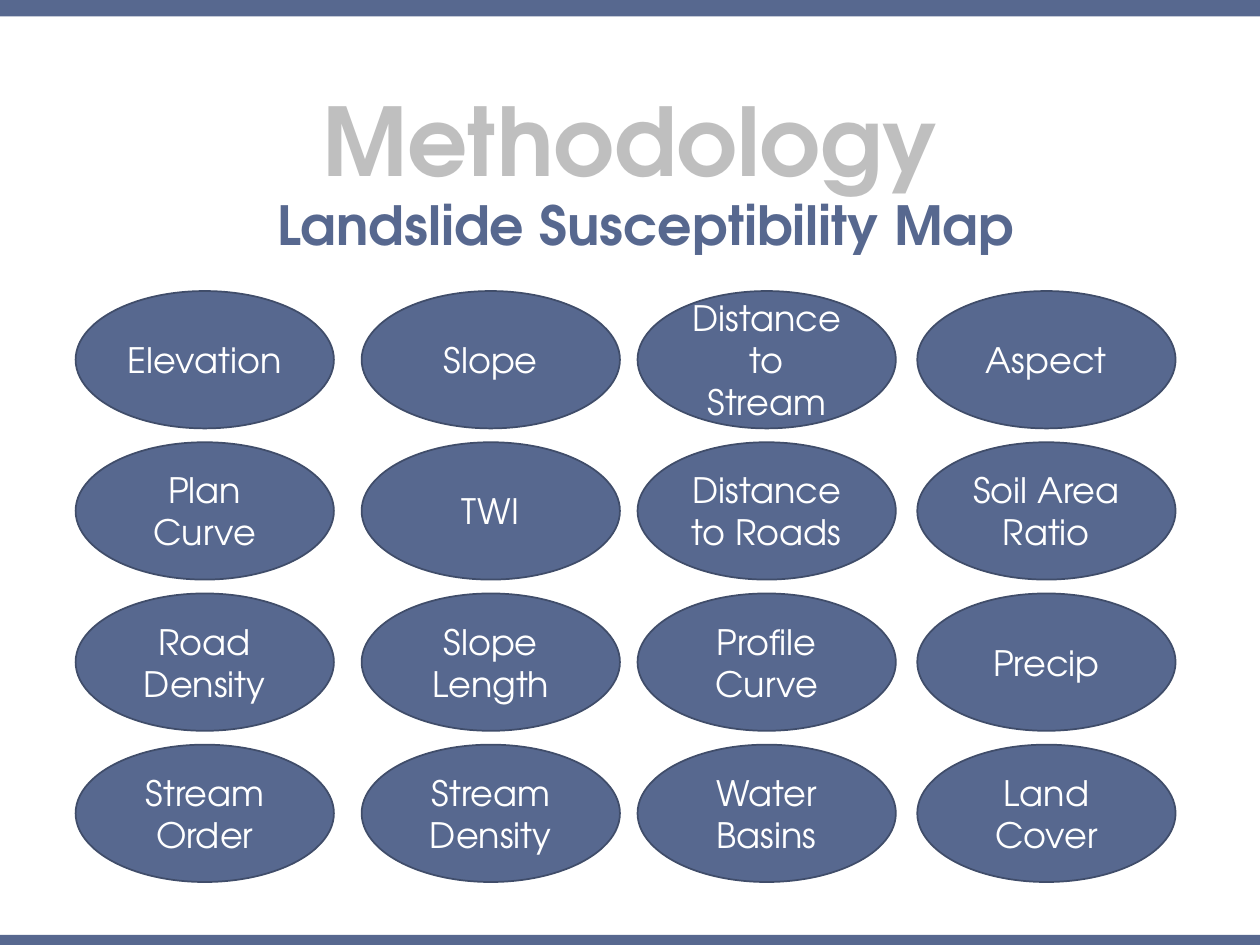
from dataclasses import dataclass

from pptx import Presentation
from pptx.dml.color import RGBColor
from pptx.enum import shapes, text
from pptx.util import Inches, Pt


@dataclass(frozen=True)
class Theme:
    font: str = "TeX Gyre Adventor"
    blue: str = "57688F"
    edge: str = "404D6A"
    gray: str = "BFBFBF"
    white: str = "FFFFFF"
    head: float = 54
    sub: float = 30.8
    body: float = 20


@dataclass(frozen=True)
class Box:
    left: float
    top: float
    width: float
    height: float

    def place(self) -> tuple:
        return tuple(map(Inches, (self.left, self.top, self.width, self.height)))


@dataclass(frozen=True)
class Style:
    size: float
    color: str
    bold: bool = False
    align: text.PP_ALIGN = text.PP_ALIGN.CENTER
    anchor: text.MSO_ANCHOR = text.MSO_ANCHOR.MIDDLE
    lines: float = 1.0
    before: float = 0


THEME = Theme()
BARS = (Box(0, 0, 10, 0.13), Box(0, 7.42, 10, 0.08))
HEAD = Style(THEME.head, THEME.gray, True, anchor=text.MSO_ANCHOR.BOTTOM,
             lines=0.9, before=10)
SUB = Style(THEME.sub, THEME.blue, True, text.PP_ALIGN.RIGHT,
            text.MSO_ANCHOR.TOP, 0.7, 10)
LABEL = Style(THEME.body, THEME.white)

COLS = (0.6, 2.87, 5.06, 7.28)
TOP, STEP = 2.31, 1.2
WIDTH, HEIGHT = 2.05, 1.09
FACTORS = (
    ("Elevation", "Slope", "Distance to Stream", "Aspect"),
    ("Plan Curve", "TWI", "Distance to Roads", "Soil Area Ratio"),
    ("Road Density", "Slope Length", "Profile Curve", "Precip"),
    ("Stream Order", "Stream Density", "Water Basins", "Land Cover"),
)


def write(shape, words: str, style: Style) -> None:
    frame = shape.text_frame
    frame.word_wrap = True
    frame.auto_size = text.MSO_AUTO_SIZE.NONE
    frame.vertical_anchor = style.anchor
    para = frame.paragraphs[0]
    para.alignment = style.align
    para.line_spacing = style.lines
    para.space_before = Pt(style.before)
    run = para.add_run()
    run.text = words
    run.font.name = THEME.font
    run.font.size = Pt(style.size)
    run.font.bold = style.bold
    run.font.color.rgb = RGBColor.from_string(style.color)


def draw(slide, kind: shapes.MSO_SHAPE, box: Box, edge: str = ""):
    """Add a blue shape, outlined only when an edge colour is given."""
    shape = slide.shapes.add_shape(kind, *box.place())
    shape.shadow.inherit = False
    shape.fill.solid()
    shape.fill.fore_color.rgb = RGBColor.from_string(THEME.blue)
    if edge:
        shape.line.color.rgb = RGBColor.from_string(edge)
        shape.line.width = Pt(1)
    else:
        shape.line.fill.background()
    return shape


def main() -> None:
    deck = Presentation()
    deck.slide_width, deck.slide_height = Inches(10), Inches(7.5)
    slide = deck.slides.add_slide(deck.slide_layouts[5])

    for bar in BARS:
        draw(slide, shapes.MSO_SHAPE.RECTANGLE, bar)

    title = slide.shapes.title
    title.left, title.top, title.width, title.height = Box(0.35, 0.6, 9.3, 1.01).place()
    write(title, "Methodology", HEAD)
    sub = slide.shapes.add_textbox(*Box(1.84, 1.61, 6.31, 0.84).place())
    write(sub, "Landslide Susceptibility Map", SUB)

    for row, names in enumerate(FACTORS):
        for left, name in zip(COLS, names):
            box = Box(left, TOP + row * STEP, WIDTH, HEIGHT)
            oval = draw(slide, shapes.MSO_SHAPE.OVAL, box, THEME.edge)
            write(oval, name, LABEL)

    deck.save("out.pptx")


if __name__ == "__main__":
    main()
